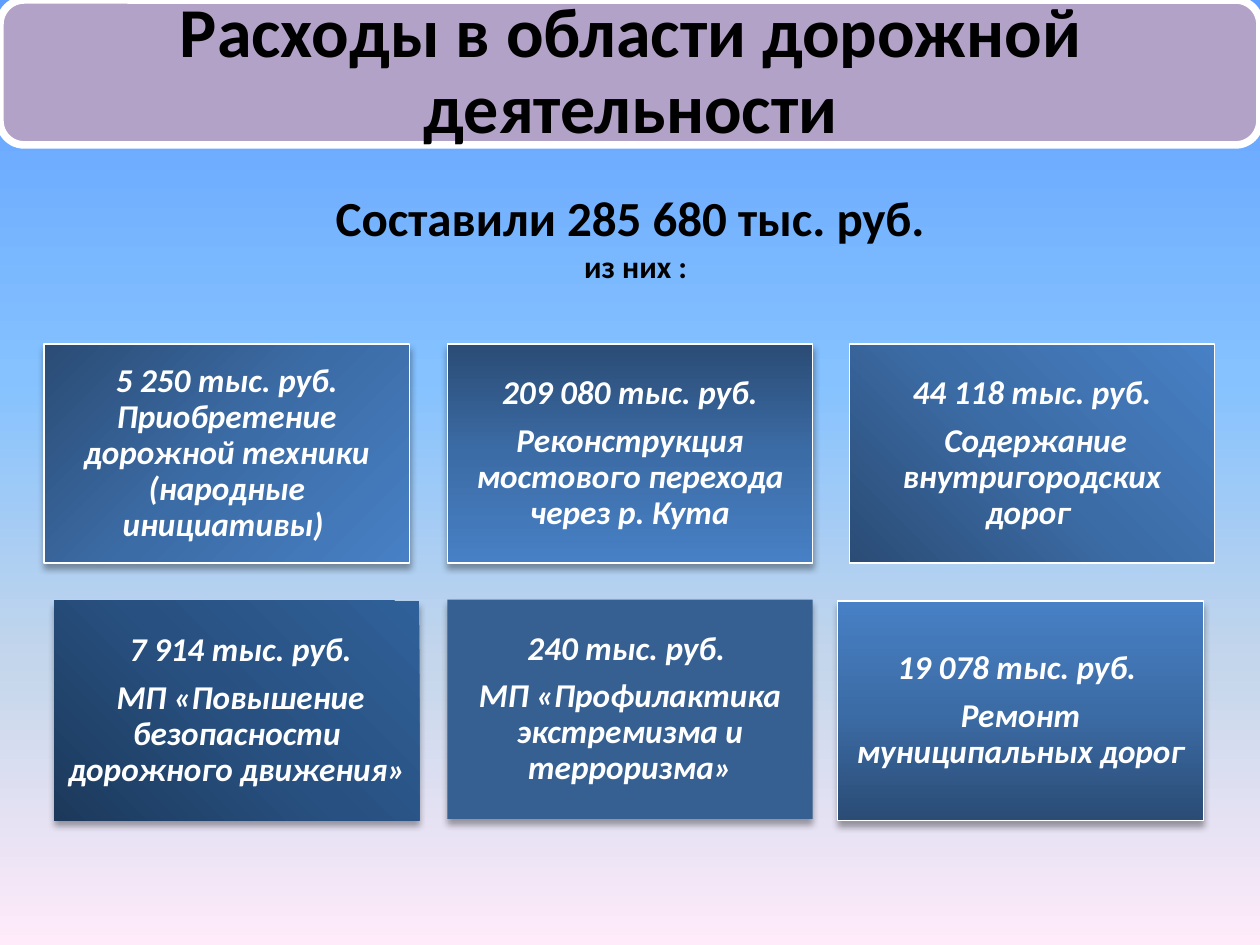
from dataclasses import dataclass
from typing import Optional

from lxml.etree import SubElement
from pptx import Presentation
from pptx.dml.color import RGBColor
from pptx.enum.shapes import MSO_SHAPE as Shape
from pptx.enum.text import MSO_ANCHOR as Anchor, MSO_AUTO_SIZE as AutoSize, PP_ALIGN as Align
from pptx.oxml.ns import qn
from pptx.util import Inches, Pt

COLORS = {
    "banner": "B3A2C7",
    "white": "FFFFFF",
    "black": "000000",
    "flat": "376092",
}
SKY = [(0, "5E9EFF"), (40, "85C2FF"), (70, "C4D6EB"), (100, "FFEBFA")]
BLUE = [(0, "2A4C75"), (50, "3C6CA6"), (100, "4780C5")]
NAVY = [(0, "1C395B"), (50, "285181"), (100, "306099")]
FONT = "Calibri"
CARD_WIDTH, CARD_HEIGHT = 2.9, 1.74


@dataclass
class Card:
    left: float
    top: float
    lines: list[str]
    stops: Optional[list] = None  # None means a flat fill
    angle: Optional[int] = None  # None means a radial gradient
    outlined: bool = True
    shadow: bool = True


CARDS = [
    Card(0.35, 2.73, ["5 250 тыс. руб. Приобретение дорожной техники (народные инициативы) "], BLUE, 45),
    Card(3.55, 2.73, ["209 080 тыс. руб.", "Реконструкция мостового перехода через р. Кута"], BLUE, 90),
    Card(6.74, 2.73, ["44 118 тыс. руб.", " Содержание внутригородских дорог "], BLUE, 315, shadow=False),
    Card(6.65, 4.77, ["19 078 тыс. руб. ", "Ремонт муниципальных дорог"], BLUE, 270),
    Card(3.55, 4.76, ["240 тыс. руб. ", "МП «Профилактика экстремизма и терроризма»"], outlined=False),
    Card(0.43, 4.77, [" 7 914 тыс. руб.", " МП «Повышение безопасности дорожного движения»"], NAVY, outlined=False),
]


def rgb(name: str) -> RGBColor:
    return RGBColor.from_string(COLORS[name])


def set_gradient(fill, owner, stops: list, angle: Optional[int]) -> None:
    """Give the fill any number of stops, linear or from the lower left corner."""
    fill.gradient()
    gradient = next(owner.iter(qn("a:gradFill")))
    for child in list(gradient):
        gradient.remove(child)
    stop_list = SubElement(gradient, qn("a:gsLst"))
    for position, color in stops:
        stop = SubElement(stop_list, qn("a:gs"), pos=str(position * 1000))
        SubElement(stop, qn("a:srgbClr"), val=color)
    if angle is None:
        radial = SubElement(gradient, qn("a:path"), path="circle")
        SubElement(radial, qn("a:fillToRect"), t="100000", r="100000")
    else:
        SubElement(gradient, qn("a:lin"), ang=str(angle * 60000), scaled="0")


def add_shadow(shape) -> None:
    effects = shape.element.spPr.find(qn("a:effectLst"))
    outer = SubElement(effects, qn("a:outerShdw"), blurRad=str(Pt(4)), dist=str(Pt(3)),
                       dir="5400000", rotWithShape="0")
    color = SubElement(outer, qn("a:srgbClr"), val=COLORS["black"])
    SubElement(color, qn("a:alpha"), val="35000")


def write(shape, lines: list[str], sizes: list[int], color: str, italic: bool = False,
          inset: Optional[float] = None, spacing: float = 1, after: float = 0) -> None:
    frame = shape.text_frame
    frame.word_wrap = True
    frame.auto_size = AutoSize.NONE
    frame.vertical_anchor = Anchor.MIDDLE
    if inset is not None:
        frame.margin_left = frame.margin_right = Inches(inset)
        frame.margin_top = frame.margin_bottom = Inches(inset)
    frame.text = "\n".join(lines)
    for para, size in zip(frame.paragraphs, sizes):
        para.alignment = Align.CENTER
        para.line_spacing = spacing
        para.space_before = Pt(0)
        para.space_after = Pt(after)
        para.font.name = FONT
        para.font.size = Pt(size)
        para.font.bold = True
        para.font.italic = italic
        para.font.color.rgb = rgb(color)


def add_card(page, card: Card) -> None:
    box = page.shapes.add_shape(Shape.RECTANGLE, Inches(card.left), Inches(card.top),
                                Inches(CARD_WIDTH), Inches(CARD_HEIGHT))
    box.shadow.inherit = False
    if card.stops:
        set_gradient(box.fill, box.element.spPr, card.stops, card.angle)
    else:
        box.fill.solid()
        box.fill.fore_color.rgb = rgb("flat")
    if card.outlined:
        box.line.color.rgb = rgb("white")
        box.line.width = Pt(0.75)
    else:
        box.line.fill.background()
    if card.shadow:
        add_shadow(box)
    write(box, card.lines, [19] * len(card.lines), "white", italic=True,
          inset=0.08, spacing=0.9, after=6.65)


def main() -> None:
    deck = Presentation()
    deck.slide_width, deck.slide_height = Inches(10), Inches(7.5)
    page = deck.slides.add_slide(deck.slide_layouts[5])
    set_gradient(page.background.fill, page.element, SKY, 90)

    # Banner, placed behind the title
    title = page.shapes.title
    banner = page.shapes.add_shape(Shape.ROUNDED_RECTANGLE, 0, 0, Inches(10), Inches(1.15))
    banner.shadow.inherit = False
    banner.fill.solid()
    banner.fill.fore_color.rgb = rgb("banner")
    banner.line.color.rgb = rgb("white")
    banner.line.width = Pt(4.33)
    title.element.addprevious(banner.element)

    # Title
    title.left, title.top = Inches(0.06), Inches(0.06)
    title.width, title.height = Inches(9.89), Inches(1.04)
    write(title, ["Расходы в области дорожной деятельности"], [40], "black",
          inset=0.17, spacing=0.9)

    # Spending cards
    for card in CARDS:
        add_card(page, card)

    # Total
    total = page.shapes.add_textbox(Inches(0.28), Inches(1.33), Inches(9.53), Inches(1.09))
    write(total, ["Составили 285 680 тыс. руб. ", "из них :"], [28, 18], "black")

    deck.save("out.pptx")


if __name__ == "__main__":
    main()
